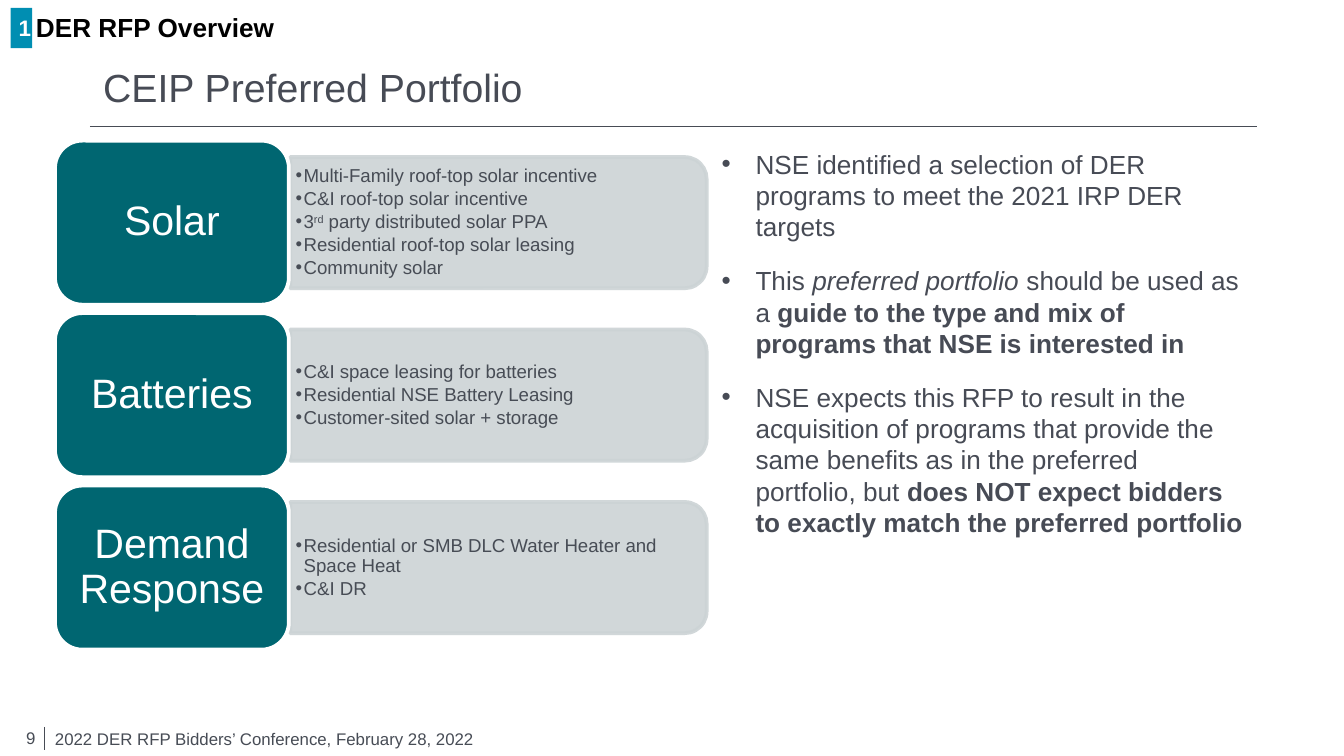
import pptx
import pptx.dml.color
import pptx.enum.shapes
import pptx.enum.text
import pptx.oxml
import pptx.oxml.ns
import pptx.util
import lxml.etree

Cm = pptx.util.Cm
Pt = pptx.util.Pt
SHAPE = pptx.enum.shapes.MSO_SHAPE
ALIGN = pptx.enum.text.PP_ALIGN
MIDDLE = pptx.enum.text.MSO_ANCHOR.MIDDLE
TOP = pptx.enum.text.MSO_ANCHOR.TOP
qn = pptx.oxml.ns.qn

SLATE, INK = "474C55", "474B55"
TEAL, BLUE, GRAY, WHITE, BLACK = "006671", "008EB2", "CCD3D5", "FFFFFF", "000000"


def color(hex_value):
    return pptx.dml.color.RGBColor.from_string(hex_value)


def write(shape, paragraphs, size, hex_value, bold=False, anchor=TOP,
          margins=(0.25, 0.13, 0.25, 0.13), indent=0, layout=None):
    """Fill a shape with paragraphs, each a list of (text, font values) spans."""
    frame = shape.text_frame
    frame.word_wrap = True
    frame.vertical_anchor = anchor
    for side, margin in zip(("left", "top", "right", "bottom"), margins):
        setattr(frame, f"margin_{side}", Cm(margin))
    for index, spans in enumerate(paragraphs):
        para = frame.add_paragraph() if index else frame.paragraphs[0]
        for name, value in (layout or {}).items():
            setattr(para, name, value)
        if indent:
            properties = para._p.get_or_add_pPr()
            properties.set("marL", str(Cm(indent)))
            properties.set("indent", str(-Cm(indent)))
            lxml.etree.SubElement(properties, qn("a:buFont"), typeface="Arial")
            lxml.etree.SubElement(properties, qn("a:buChar"), char="•")
        for text, changes in spans:
            span = para.add_run()
            span.text = text
            values = {"name": "Arial", "size": Pt(size), "bold": bold} | changes
            baseline = values.pop("baseline", None)
            for name, value in values.items():
                setattr(span.font, name, value)
            span.font.color.rgb = color(hex_value)
            if baseline:
                span.font._element.set("baseline", baseline)


deck = pptx.Presentation()
deck.slide_width, deck.slide_height = Cm(25.4), Cm(14.29)
slide = deck.slides.add_slide(deck.slide_layouts[6])
shapes = slide.shapes

# Title rule and footer divider
for x1, y1, x2, y2 in [(1.7, 2.39, 23.75, 2.39), (0.84, 13.74, 0.84, 14.17)]:
    rule = shapes.add_connector(pptx.enum.shapes.MSO_CONNECTOR.STRAIGHT,
                                Cm(x1), Cm(y1), Cm(x2), Cm(y2))
    rule.line.color.rgb = color(SLATE)
    rule.line.width = Pt(0.75)
    lxml.etree.SubElement(rule._element.spPr, qn("a:effectLst"))

# Section number
badge = shapes.add_shape(SHAPE.RECTANGLE, Cm(0.2), Cm(0.15), Cm(0.41), Cm(0.76))
badge.shadow.inherit = False
badge.fill.solid()
badge.fill.fore_color.rgb = color(BLUE)
badge.line.fill.background()
write(badge, [[("1", {})]], 12, WHITE, bold=True, anchor=MIDDLE,
      margins=(0.13, 0, 0, 0), layout={"alignment": ALIGN.CENTER})

# Section name, title and footer
labels = [
    ((0.43, 0.2, 6.78, 0.61), "DER RFP Overview", 14, BLACK, True, MIDDLE, ALIGN.LEFT),
    ((1.7, 0.89, 22.07, 1.5), "CEIP Preferred Portfolio", 21, INK, False, MIDDLE, ALIGN.LEFT),
    ((-0.15, 13.51, 1.07, 0.86), "9", 9, SLATE, False, MIDDLE, ALIGN.RIGHT),
    ((0.79, 13.64, 12.29, 0.64), "2022 DER RFP Bidders’ Conference, February 28, 2022",
     9, SLATE, False, TOP, ALIGN.LEFT),
]
for place, text, size, hex_value, bold, anchor, alignment in labels:
    box = shapes.add_textbox(*map(Cm, place))
    write(box, [[(text, {})]], size, hex_value, bold, anchor, layout={"alignment": alignment})

# Key messages
messages = [
    [("NSE identified a selection of DER programs to meet the 2021 IRP DER targets", {})],
    [("This ", {}), ("preferred portfolio", {"italic": True}), (" should be used as a ", {}),
     ("guide to the type and mix of programs that NSE is interested in", {"bold": True})],
    [("NSE expects this RFP to result in the acquisition of programs that provide the same "
      "benefits as in the preferred portfolio, but ", {}),
     ("does NOT expect bidders to exactly match the preferred portfolio", {"bold": True})],
]
box = shapes.add_textbox(Cm(13.39), Cm(2.67), Cm(10.39), Cm(9.53))
write(box, messages, 14, INK, indent=0.64, layout={"space_after": Pt(12)})

# Portfolio categories, one row each
categories = [
    ("Solar", [
        [("Multi-Family roof-top solar incentive", {})],
        [("C&I roof-top solar incentive", {})],
        [("3", {}), ("rd", {"baseline": "30000"}), (" party distributed solar PPA", {})],
        [("Residential roof-top solar leasing", {})],
        [("Community solar", {})],
    ]),
    ("Batteries", [
        [("C&I space leasing for batteries", {})],
        [("Residential NSE Battery Leasing", {})],
        [("Customer-sited solar + storage", {})],
    ]),
    ("Demand Response", [
        [("Residential or SMB DLC Water Heater and Space Heat", {})],
        [("C&I DR", {})],
    ]),
]
tile_height, panel_width, panel_length, row_pitch = 3.1, 2.48, 7.87, 3.26
for row, (category, programs) in enumerate(categories):
    top = 2.66 + row * row_pitch
    middle = top + tile_height / 2

    # Panel, turned so that its rounded end faces right
    panel = shapes.add_shape(SHAPE.ROUND_2_SAME_RECTANGLE, Cm(8.18),
                             Cm(middle - panel_length / 2), Cm(panel_width), Cm(panel_length))
    panel.rotation = 90
    tile = shapes.add_shape(SHAPE.ROUNDED_RECTANGLE, Cm(1.04), Cm(top), Cm(4.42), Cm(tile_height))
    for shape, fill, line in [(panel, GRAY, GRAY), (tile, TEAL, WHITE)]:
        shape.shadow.inherit = False
        shape.fill.solid()
        shape.fill.fore_color.rgb = color(fill)
        shape.line.color.rgb = color(line)
        shape.line.width = Pt(2)
    for shade in panel._element.spPr.iter(qn("a:srgbClr")):
        lxml.etree.SubElement(shade, qn("a:alpha"), val="90000")

    write(tile, [[(category, {})]], 22, WHITE, anchor=MIDDLE, margins=(0.23, 0.13, 0.23, 0.13),
          layout={"alignment": ALIGN.CENTER, "line_spacing": 0.9, "space_after": Pt(7.7)})
    box = shapes.add_textbox(Cm(5.49), Cm(middle - 1.12), Cm(7.75), Cm(2.24))
    write(box, programs, 10, SLATE, anchor=MIDDLE, margins=(0.1, 0.05, 0.1, 0.05), indent=0.15,
          layout={"line_spacing": 0.9, "space_after": Pt(1.5)})

deck.save("out.pptx")
